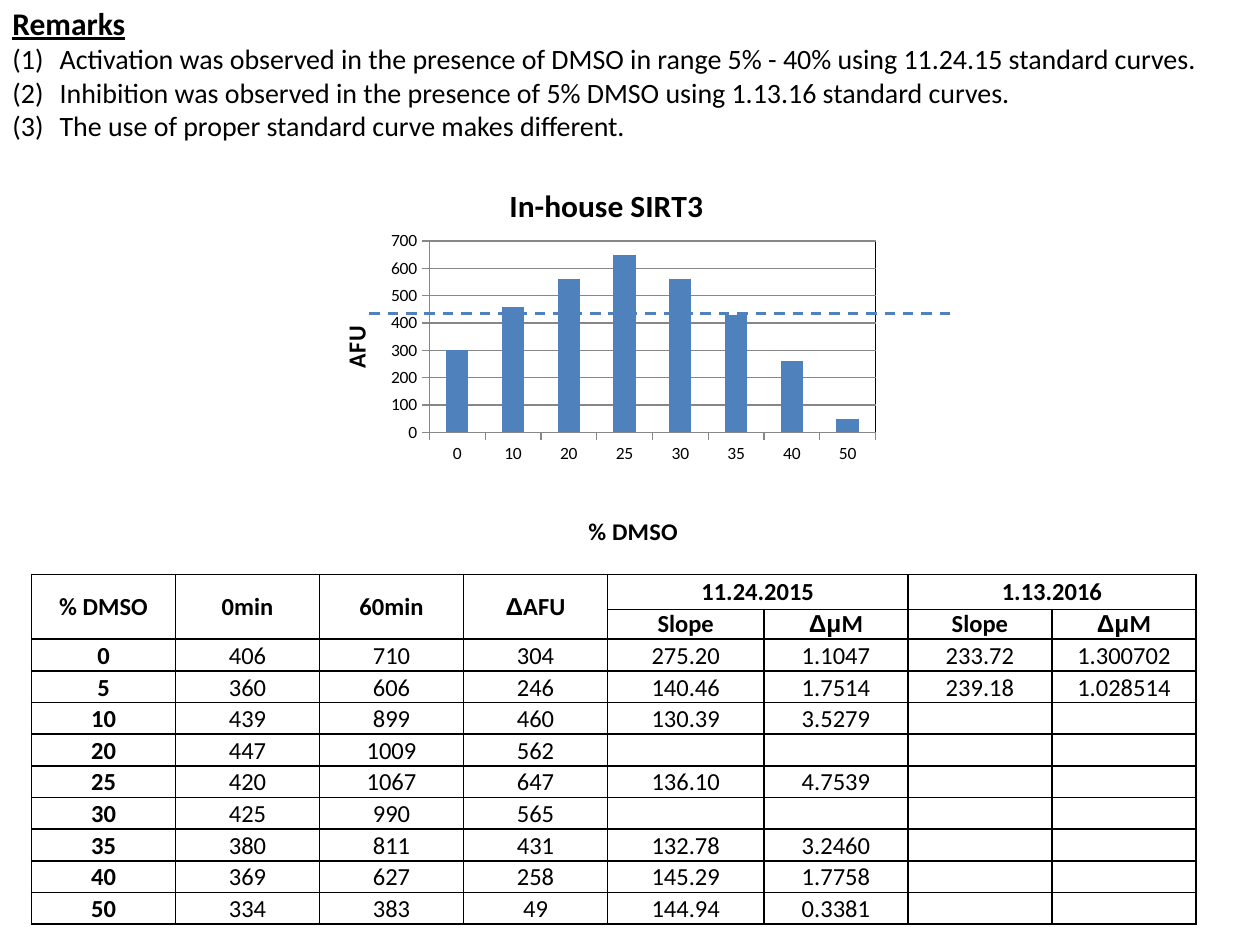
from lxml import etree
from pptx import Presentation
from pptx.chart.data import CategoryChartData
from pptx.dml.color import RGBColor
from pptx.enum.chart import XL_CHART_TYPE, XL_TICK_MARK
from pptx.enum.dml import MSO_LINE
from pptx.enum.shapes import MSO_CONNECTOR
from pptx.enum.text import MSO_ANCHOR, PP_ALIGN
from pptx.oxml import parse_xml
from pptx.oxml.ns import nsdecls, qn
from pptx.util import Pt

COLUMNS = XL_CHART_TYPE.COLUMN_CLUSTERED
TICK_OUT = XL_TICK_MARK.OUTSIDE
DASH = MSO_LINE.DASH
STRAIGHT = MSO_CONNECTOR.STRAIGHT
MIDDLE, BOTTOM = MSO_ANCHOR.MIDDLE, MSO_ANCHOR.BOTTOM
CENTER = PP_ALIGN.CENTER

FONT, GREEK_FONT = "Calibri", "Arial"
BLACK, BLUE, GRAY = "000000", "4F81BD", "878787"

REMARKS = [
    "Activation was observed in the presence of DMSO in range 5% - 40% using 11.24.15 standard curves.",
    "Inhibition was observed in the presence of 5% DMSO using 1.13.16 standard curves.",
    "The use of proper standard curve makes different.",
]
ACTIVITY = {"0": 300, "10": 460, "20": 560, "25": 650,
            "30": 560, "35": 430, "40": 260, "50": 50}
HEADER_ROWS = [
    ["% DMSO", "0min", "60min", "ΔAFU", "11.24.2015", "", "1.13.2016", ""],
    ["", "", "", "", "Slope", "ΔμM", "Slope", "ΔμM"],
]
DATA_ROWS = [
    ["0", "406", "710", "304", "275.20", "1.1047", "233.72", "1.300702"],
    ["5", "360", "606", "246", "140.46", "1.7514", "239.18", "1.028514"],
    ["10", "439", "899", "460", "130.39", "3.5279", "", ""],
    ["20", "447", "1009", "562", "", "", "", ""],
    ["25", "420", "1067", "647", "136.10", "4.7539", "", ""],
    ["30", "425", "990", "565", "", "", "", ""],
    ["35", "380", "811", "431", "132.78", "3.2460", "", ""],
    ["40", "369", "627", "258", "145.29", "1.7758", "", ""],
    ["50", "334", "383", "49", "144.94", "0.3381", "", ""],
]
COLUMN_WIDTHS = [82.3] * 4 + [89.4] + [82.3] * 3
ROW_HEIGHTS = [20, 17.1] + [18.1] * len(DATA_ROWS)


def color(value):
    return RGBColor.from_string(value)


def style_font(font, size, bold=False):
    font.name, font.size, font.bold = FONT, Pt(size), bold
    font.color.rgb = color(BLACK)


def add_remarks(slide):
    box = slide.shapes.add_textbox(Pt(0), Pt(-1.4), Pt(708), Pt(87))
    frame = box.text_frame
    frame.word_wrap = True
    heading = frame.paragraphs[0]
    heading.text = "Remarks"
    style_font(heading.font, 18, bold=True)
    heading.font.underline = True
    for remark in REMARKS:
        para = frame.add_paragraph()
        para.text = remark
        style_font(para.font, 16)
        # Hanging indent with automatic (1), (2), (3) numbers
        properties = para._p.get_or_add_pPr()
        properties.set("marL", str(Pt(27)))
        properties.set("indent", str(-Pt(27)))
        numbering = parse_xml(f'<a:buAutoNum {nsdecls("a")} type="arabicParenBoth"/>')
        properties.insert(0, numbering)


def manual_layout(x, y, width=None, height=None):
    """Place a chart part, as fractions of the chart's size."""
    parts = '<c:xMode val="edge"/><c:yMode val="edge"/>'
    target = ""
    sizes = ""
    if width is not None:
        target = '<c:layoutTarget val="inner"/>'
        sizes = f'<c:w val="{width}"/><c:h val="{height}"/>'
    return parse_xml(
        f'<c:layout {nsdecls("c")}><c:manualLayout>{target}{parts}'
        f'<c:x val="{x}"/><c:y val="{y}"/>{sizes}</c:manualLayout></c:layout>')


def set_layout(element, layout, index):
    for old in element.findall(qn("c:layout")):
        element.remove(old)
    element.insert(index, layout)


def set_title(title, text, size):
    para = title.text_frame.paragraphs[0]
    span = para.add_run()
    span.text = text
    style_font(span.font, size, bold=True)


def style_axis(axis, title):
    axis.major_tick_mark = TICK_OUT
    axis.format.line.color.rgb = color(GRAY)
    style_font(axis.tick_labels.font, 10)
    set_title(axis.axis_title, title, 14)


def add_activity_chart(shapes):
    data = CategoryChartData()
    data.categories = list(ACTIVITY)
    data.add_series("In-house SIRT3", list(ACTIVITY.values()))
    chart = shapes.add_chart(COLUMNS, Pt(180), Pt(88.6), Pt(326.9), Pt(228.2), data).chart
    style_font(chart.font, 10)
    chart.has_legend = False
    chart.has_title = True
    set_title(chart.chart_title, "In-house SIRT3", 18)

    # Axes and bars
    style_axis(chart.category_axis, "% DMSO")
    style_axis(chart.value_axis, "AFU")
    chart.value_axis.minimum_scale = 0
    chart.value_axis.maximum_scale = 700
    chart.value_axis.major_unit = 100
    chart.value_axis.major_gridlines.format.line.color.rgb = color(GRAY)
    plot = chart.plots[0]
    plot.gap_width = 150
    plot.vary_by_categories = False
    fill = plot.series[0].format.fill
    fill.solid()
    fill.fore_color.rgb = color(BLUE)

    # Plot frame and positions of plot and titles
    area = chart._chartSpace.chart.plotArea
    set_layout(area, manual_layout(0.2, 0.22, 0.78, 0.49), 0)
    area.append(parse_xml(
        f'<c:spPr {nsdecls("c", "a")}><a:noFill/><a:ln w="{Pt(0.75)}"><a:solidFill>'
        f'<a:srgbClr val="{BLACK}"/></a:solidFill></a:ln></c:spPr>'))
    set_layout(chart.chart_title._element, manual_layout(0.33, 0.06), 1)
    set_layout(chart.category_axis.axis_title._element, manual_layout(0.47, 0.91), 1)


def add_threshold(shapes):
    line = shapes.add_connector(STRAIGHT, Pt(211), Pt(179.3), Pt(543), Pt(179.3))
    line.line.color.rgb = color(BLUE)
    line.line.width = Pt(1.5)
    line.line.dash_style = DASH
    etree.SubElement(line._element.spPr, qn("a:effectLst"))


def set_borders(cell):
    properties = cell._tc.get_or_add_tcPr()
    for index, side in enumerate(("lnL", "lnR", "lnT", "lnB")):
        properties.insert(index, parse_xml(
            f'<a:{side} {nsdecls("a")} w="{Pt(1)}"><a:solidFill>'
            f'<a:srgbClr val="{BLACK}"/></a:solidFill></a:{side}>'))


def fill_cell(cell, text, bold, anchor):
    cell.margin_left = cell.margin_right = cell.margin_top = cell.margin_bottom = 0
    cell.vertical_anchor = anchor
    cell.fill.background()
    set_borders(cell)
    para = cell.text_frame.paragraphs[0]
    para.alignment = CENTER
    style_font(para.font, 14, bold)
    # Greek letters lead their label and have their own font
    label = text.lstrip("Δμ")
    greek = text[:len(text) - len(label)]
    if greek:
        span = para.add_run()
        span.text = greek
        span.font.name = GREEK_FONT
    if label:
        para.add_run().text = label
    else:
        etree.SubElement(para._p, qn("a:endParaRPr"), sz="1400")


def add_results_table(slide):
    rows = HEADER_ROWS + DATA_ROWS
    table = slide.shapes.add_table(
        len(rows), len(COLUMN_WIDTHS), Pt(18), Pt(328.2),
        Pt(sum(COLUMN_WIDTHS)), Pt(sum(ROW_HEIGHTS))).table
    table.first_row = table.horz_banding = False
    for column, width in zip(table.columns, COLUMN_WIDTHS):
        column.width = Pt(width)
    for row, height in zip(table.rows, ROW_HEIGHTS):
        row.height = Pt(height)
    for row_index, texts in enumerate(rows):
        is_header = row_index < len(HEADER_ROWS)
        for column_index, text in enumerate(texts):
            fill_cell(table.cell(row_index, column_index), text,
                      is_header or column_index == 0, MIDDLE if is_header else BOTTOM)
    # Merged headings: tall ones on the left, wide dates on the right
    for column_index in range(4):
        table.cell(0, column_index).merge(table.cell(1, column_index))
    for column_index in (4, 6):
        table.cell(0, column_index).merge(table.cell(0, column_index + 1))


def main():
    deck = Presentation()
    deck.slide_width, deck.slide_height = Pt(720), Pt(540)
    slide = deck.slides.add_slide(deck.slide_layouts[6])
    group = slide.shapes.add_group_shape()
    add_activity_chart(group.shapes)
    add_threshold(group.shapes)
    add_results_table(slide)
    add_remarks(slide)
    deck.save("out.pptx")


if __name__ == "__main__":
    main()
